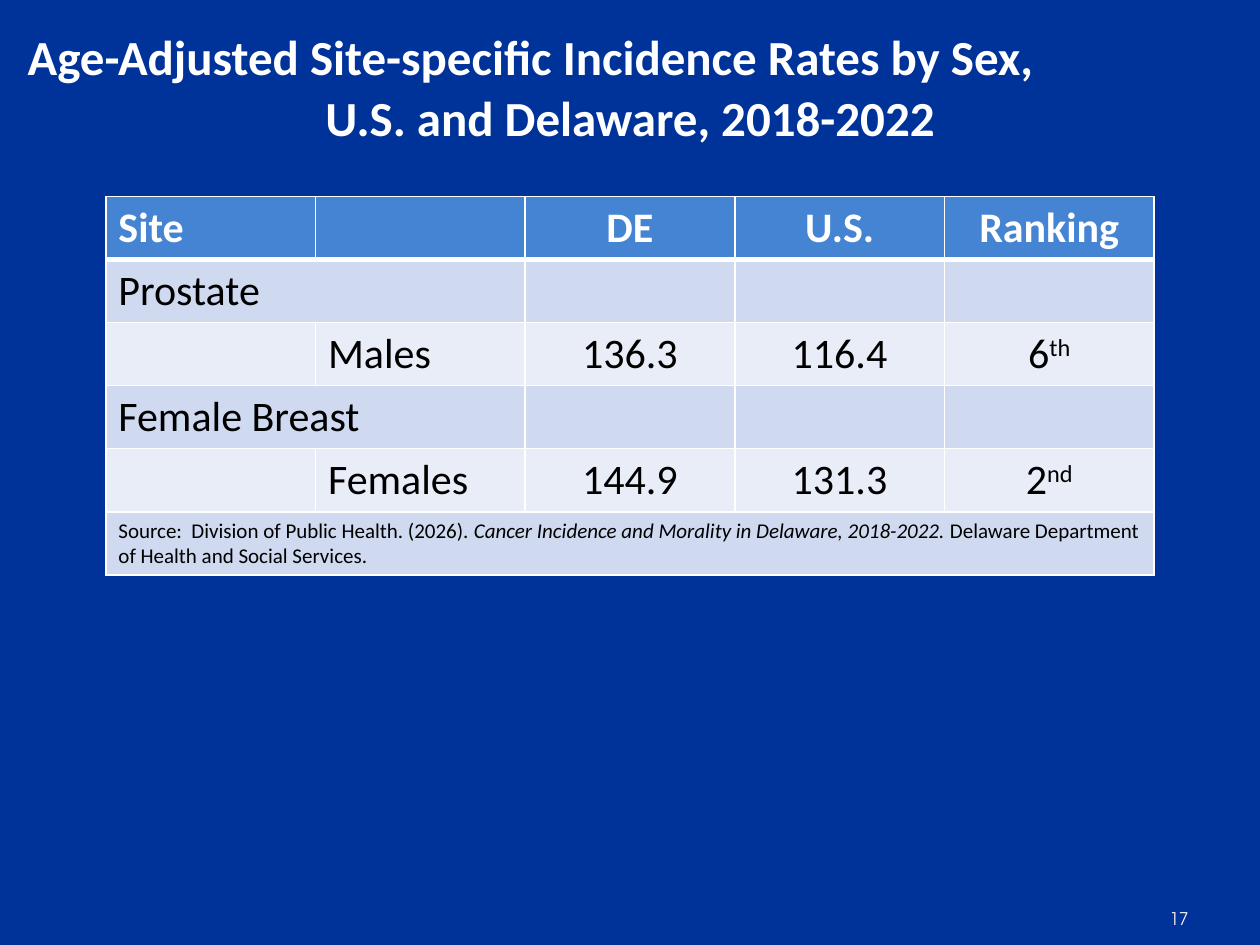
import pptx
import pptx.dml.color
import pptx.enum.text
import pptx.oxml
import pptx.oxml.ns
import pptx.util

Inches = pptx.util.Inches
Pt = pptx.util.Pt
RGB = pptx.dml.color.RGBColor
ALIGN = pptx.enum.text.PP_ALIGN
MIDDLE = pptx.enum.text.MSO_ANCHOR.MIDDLE

NAVY = RGB(0x00, 0x33, 0x99)
BLUE = RGB(0x45, 0x84, 0xD3)
DARK = RGB(0xCF, 0xD9, 0xEF)
LIGHT = RGB(0xE9, 0xED, 0xF7)
PALE = RGB(0xF2, 0xF2, 0xF2)
WHITE = RGB(0xFF, 0xFF, 0xFF)
BLACK = RGB(0x00, 0x00, 0x00)

SOURCE = (
    "Source:  Division of Public Health. (2026).",
    (" Cancer Incidence and Morality in Delaware, 2018-2022. ", "italic"),
    "Delaware Department of Health and Social Services.",
)
ROWS = [
    ["Site", "", "DE", "U.S.", "Ranking"],
    ["Prostate", "", "", "", ""],
    ["", "Males", "136.3", "116.4", ("6", ("th", "super"))],
    ["Female Breast", "", "", "", ""],
    ["", "Females", "144.9", "131.3", ("2", ("nd", "super"))],
    [SOURCE, "", "", "", ""],
]
SPANS = {1: 1, 3: 1, 5: 4}


def write(para, text, size=24, face="Calibri", color=BLACK, bold=False,
          align=ALIGN.LEFT, space=None):
    para.alignment = align
    if space:
        para.line_spacing = Pt(space)
    for part in (text,) if isinstance(text, str) else text:
        words, style = (part, "") if isinstance(part, str) else part
        run = para.add_run()
        run.text = words
        font = run.font
        font.size, font.name, font.bold = Pt(size), face, bold
        font.color.rgb = color
        if style == "italic":
            font.italic = True
        if style == "super":
            run._r.get_or_add_rPr().set("baseline", "30000")


def add_box(slide, box, left, right):
    frame = slide.shapes.add_textbox(*map(Inches, box)).text_frame
    frame.word_wrap = True
    frame.vertical_anchor = MIDDLE
    frame.margin_left, frame.margin_right = Inches(left), Inches(right)
    return frame


def add_title(slide, box):
    frame = add_box(slide, box, 0.22, 0.22)
    look = dict(size=28, color=WHITE, bold=True, space=35)
    write(frame.paragraphs[0],
          "Age-Adjusted Site-specific Incidence Rates by Sex,", **look)
    write(frame.add_paragraph(), "U.S. and Delaware, 2018-2022",
          align=ALIGN.CENTER, **look)


def add_number(slide, box):
    frame = add_box(slide, box, 0.03, 0.05)
    write(frame.paragraphs[0], "17", size=10, face="TeX Gyre Adventor",
          color=PALE)


def add_edges(cell, head, below):
    props = cell._tc.get_or_add_tcPr()
    widths = {"L": 1, "R": 1, "T": 3 if below else 1, "B": 3 if head else 1}
    for side, width in widths.items():
        props.append(pptx.oxml.parse_xml(
            f'<a:ln{side} {pptx.oxml.ns.nsdecls("a")} w="{Pt(width)}">'
            f'<a:solidFill><a:srgbClr val="{WHITE}"/></a:solidFill>'
            f'</a:ln{side}>'))


def add_rates(slide, box):
    left, top, width, height = box
    count, wide = len(ROWS), len(ROWS[0])
    table = slide.shapes.add_table(count, wide, *map(Inches, box)).table
    table.horz_banding = False
    for col in table.columns:
        col.width = Inches(width / wide)
    for r, row in enumerate(ROWS):
        head = r == 0
        table.rows[r].height = Inches(height / count)
        for c, text in enumerate(row):
            cell = table.cell(r, c)
            add_edges(cell, head, r == 1)
            cell.fill.solid()
            cell.fill.fore_color.rgb = BLUE if head else DARK if r % 2 else LIGHT
            if text:
                write(cell.text_frame.paragraphs[0], text,
                      size=12 if text is SOURCE else 24,
                      color=WHITE if head else BLACK, bold=head,
                      align=ALIGN.CENTER if c > 1 else ALIGN.LEFT)
        if r in SPANS:
            table.cell(r, 0).merge(table.cell(r, SPANS[r]))


def main():
    deck = pptx.Presentation()
    deck.slide_width, deck.slide_height = Inches(10), Inches(7.5)
    slide = deck.slides.add_slide(deck.slide_layouts[6])
    slide.background.fill.solid()
    slide.background.fill.fore_color.rgb = NAVY
    add_title(slide, (0, 0.01, 10, 1.33))
    add_number(slide, (9.25, 7.09, 0.61, 0.4))
    add_rates(slide, (0.84, 1.56, 8.32, 3))
    deck.save("out.pptx")


if __name__ == "__main__":
    main()
